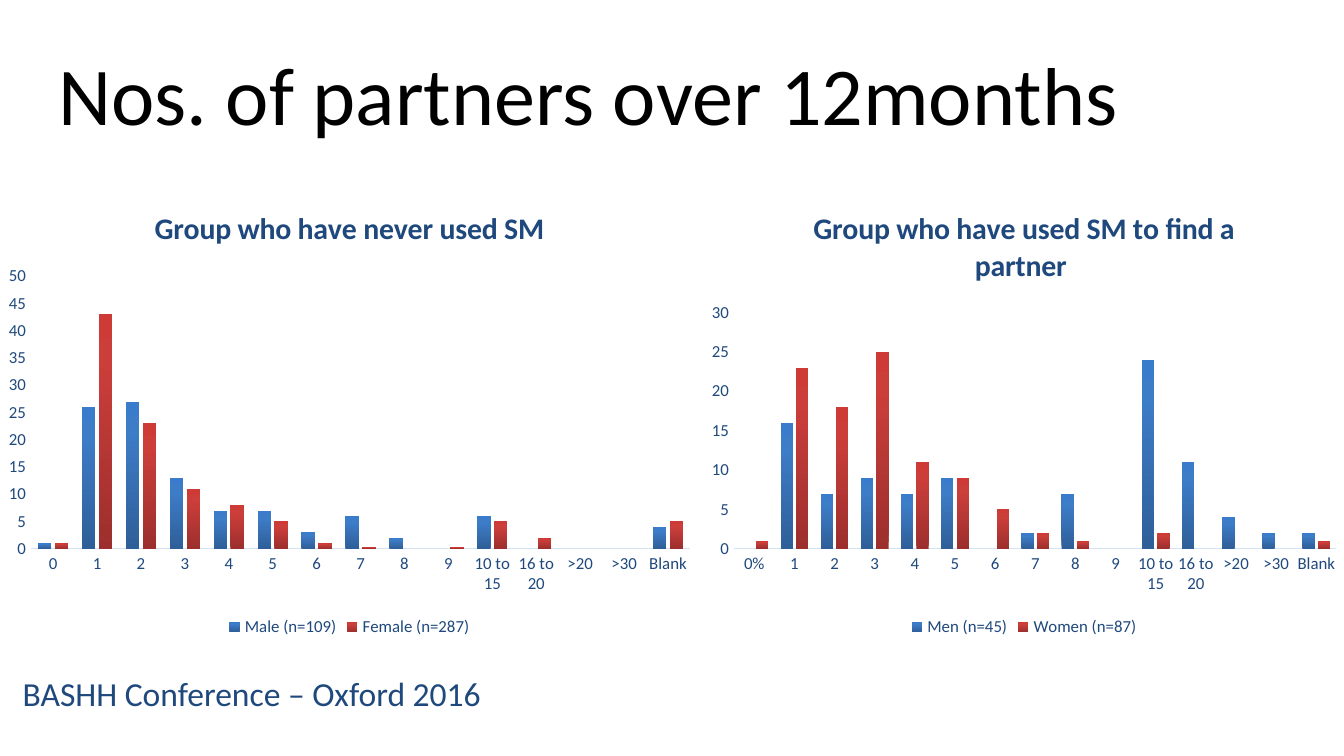
from copy import deepcopy

from pptx import Presentation
from pptx import util as u
from pptx.chart.data import CategoryChartData
from pptx.dml.color import RGBColor
from pptx.enum import chart as charts, text
from pptx.oxml import ns

FONT = "Calibri"
BLACK = RGBColor(0x00, 0x00, 0x00)
NAVY = RGBColor(0x1F, 0x49, 0x7D)
PALE_BLUE = RGBColor(0xD4, 0xE3, 0xF4)

# Gradient stops, from the foot of a column to its top
BLUES = (RGBColor(0x2F, 0x5F, 0x99), RGBColor(0x3D, 0x7C, 0xC7), RGBColor(0x3A, 0x7C, 0xCB))
REDS = (RGBColor(0x9C, 0x2F, 0x2D), RGBColor(0xCB, 0x3E, 0x3A), RGBColor(0xCE, 0x3B, 0x37))
STOP_POSITIONS = (0, 0.8, 1)

# A 16:9 slide
SLIDE_WIDTH = u.Inches(10)
SLIDE_HEIGHT = SLIDE_WIDTH * 9 // 16
CHART_TOP, CHART_HEIGHT = 24.71, 60.27

PARTNER_COUNTS = [str(count) for count in range(1, 10)] + [
    "10 to 15", "16 to 20", ">20", ">30", "Blank"]
NEVER_USED = {
    "Male (n=109)": (1, 26, 27, 13, 7, 7, 3, 6, 2, 0, 6, 0, 0, 0, 4),
    "Female (n=287)": (1, 43, 23, 11, 8, 5, 1, 0.3, 0, 0.3, 5, 2, 0, 0, 5),
}
USED = {
    "Men (n=45)": (0, 16, 7, 9, 7, 9, 0, 2, 7, 0, 24, 11, 4, 2, 2),
    "Women (n=87)": (1, 23, 18, 25, 11, 9, 5, 2, 1, 0, 2, 0, 0, 0, 1),
}


def place(left, top, width, height):
    """Turn percentages of the slide's size into lengths."""
    return (int(SLIDE_WIDTH * left / 100), int(SLIDE_HEIGHT * top / 100),
            int(SLIDE_WIDTH * width / 100), int(SLIDE_HEIGHT * height / 100))


def style_font(font, size, color, bold=False):
    font.name, font.size, font.bold = FONT, u.Pt(size), bold
    font.color.rgb = color


def add_text(slide, box, words, size, color, anchor, alignment):
    frame = slide.shapes.add_textbox(*place(*box)).text_frame
    frame.word_wrap = True
    frame.vertical_anchor = anchor
    paragraph = frame.paragraphs[0]
    paragraph.text = words
    paragraph.alignment = alignment
    style_font(paragraph.font, size, color)


def fill_gradient(series, colors):
    fill = series.format.fill
    fill.gradient()
    fill.gradient_angle = 90
    stop_list = series._element.find(".//" + ns.qn("a:gsLst"))
    stop_list.append(deepcopy(stop_list[-1]))
    for stop, position, color in zip(fill.gradient_stops, STOP_POSITIONS, colors):
        stop.position = position
        stop.color.rgb = color


def style_axis(axis):
    axis.has_major_gridlines = False
    axis.major_tick_mark = axis.minor_tick_mark = charts.XL_TICK_MARK.NONE
    style_font(axis.tick_labels.font, 9, NAVY)


def add_column_chart(slide, left, width, title, first_category, values, maximum):
    data = CategoryChartData()
    data.categories = [first_category] + PARTNER_COUNTS
    for name, numbers in values.items():
        data.add_series(name, numbers)
    chart = slide.shapes.add_chart(
        charts.XL_CHART_TYPE.COLUMN_CLUSTERED,
        *place(left, CHART_TOP, width, CHART_HEIGHT), data).chart
    style_font(chart.font, 10, BLACK)

    # Title and legend
    chart.has_title = True
    chart.chart_title.include_in_layout = False
    paragraph = chart.chart_title.text_frame.paragraphs[0]
    paragraph.text = title
    style_font(paragraph.font, 16, NAVY, bold=True)
    chart.has_legend = True
    chart.legend.position = charts.XL_LEGEND_POSITION.BOTTOM
    chart.legend.include_in_layout = False
    style_font(chart.legend.font, 9, NAVY)

    # Axes
    style_axis(chart.category_axis)
    chart.category_axis.format.line.color.rgb = PALE_BLUE
    chart.category_axis.format.line.width = u.Pt(0.75)
    style_axis(chart.value_axis)
    chart.value_axis.format.line.fill.background()
    chart.value_axis.minimum_scale = 0
    chart.value_axis.maximum_scale = maximum
    chart.value_axis.major_unit = 5

    # Columns
    plot = chart.plots[0]
    plot.vary_by_categories = False
    plot.gap_width, plot.overlap = 100, -24
    for series, colors in zip(plot.series, (BLUES, REDS)):
        fill_gradient(series, colors)


def main():
    presentation = Presentation()
    presentation.slide_width, presentation.slide_height = SLIDE_WIDTH, SLIDE_HEIGHT
    slide = presentation.slides.add_slide(presentation.slide_layouts[6])

    # Footer and heading
    add_text(slide, (0.7, 88.18, 47.8, 12.27), "BASHH Conference – Oxford 2016",
             18, NAVY, text.MSO_ANCHOR.TOP, text.PP_ALIGN.LEFT)
    add_text(slide, (-1.2, 3.91, 90, 16.71), "Nos. of partners over 12months",
             44, BLACK, text.MSO_ANCHOR.MIDDLE, text.PP_ALIGN.CENTER)

    # Charts
    add_column_chart(slide, 52, 48.4, "Group who have used SM to find a partner ",
                     "0%", USED, 30)
    add_column_chart(slide, -0.4, 52.8, "Group who have never used SM",
                     "0", NEVER_USED, 50)

    presentation.save("out.pptx")


if __name__ == "__main__":
    main()
